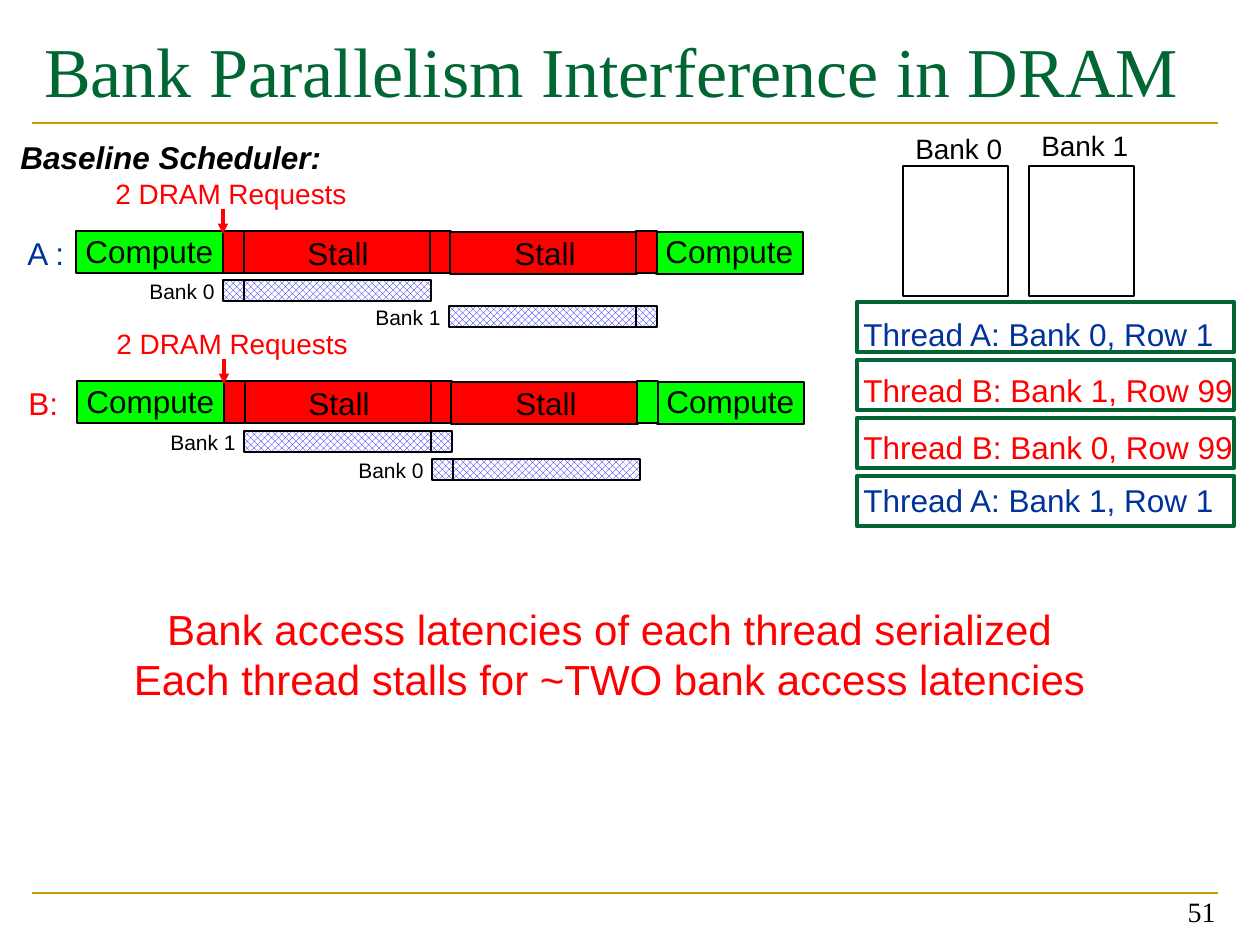
import lxml.etree
import pptx
import pptx.dml.color
import pptx.enum.dml
import pptx.enum.shapes
import pptx.enum.text
import pptx.oxml.ns
import pptx.util

EMU_PER_PX = 914400 / 126
BLACK, WHITE, RED, BLUE = "000000", "FFFFFF", "FF0000", "003399"
LIME, GREEN, GOLD, HATCH = "00FF00", "006633", "CC9900", "0000FF"
SHORT, LONG = 21, 187


def px(length):
    return pptx.util.Emu(round(length * EMU_PER_PX))


def color(value):
    return pptx.dml.color.RGBColor.from_string(value)


def add_text(slide, box, lines, size, fill, font="Arial", align="LEFT",
             anchor="TOP", wrap=False, bold=False, italic=False):
    shape = slide.shapes.add_textbox(*map(px, box))
    frame = shape.text_frame
    frame.word_wrap = wrap
    frame.vertical_anchor = getattr(pptx.enum.text.MSO_ANCHOR, anchor)
    frame.text = lines
    for paragraph in frame.paragraphs:
        paragraph.alignment = getattr(pptx.enum.text.PP_ALIGN, align)
        paragraph.font.name = font
        paragraph.font.size = pptx.util.Pt(size)
        paragraph.font.color.rgb = color(fill)
        paragraph.font.bold = bold
        paragraph.font.italic = italic
    return shape


def add_box(slide, box, fill=None, line=BLACK, weight=0.75):
    shape = slide.shapes.add_shape(
        pptx.enum.shapes.MSO_SHAPE.RECTANGLE, *map(px, box))
    shape.shadow.inherit = False
    shape.line.color.rgb = color(line)
    shape.line.width = pptx.util.Pt(weight)
    if fill is None:
        shape.fill.background()
    elif fill == HATCH:
        shape.fill.patterned()
        shape.fill.pattern = pptx.enum.dml.MSO_PATTERN.LARGE_CHECKER_BOARD
        shape.fill.fore_color.rgb = color(HATCH)
        shape.fill.back_color.rgb = color(WHITE)
    else:
        shape.fill.solid()
        shape.fill.fore_color.rgb = color(fill)


def add_line(slide, start, end, line, weight, arrow=False):
    connector = slide.shapes.add_connector(
        pptx.enum.shapes.MSO_CONNECTOR.STRAIGHT, *map(px, start + end))
    connector.line.color.rgb = color(line)
    connector.line.width = pptx.util.Pt(weight)
    qualified = pptx.oxml.ns.qn
    properties = connector._element.spPr
    if arrow:
        outline = properties.find(qualified("a:ln"))
        lxml.etree.SubElement(outline, qualified("a:tailEnd"), type="triangle")
    lxml.etree.SubElement(properties, qualified("a:effectLst"))


def add_frame(slide, left, right):
    for top in (123, 893):
        add_line(slide, (left, top), (right, top), GOLD, 1.5)
    add_text(slide, (left, 21, right - left, 147),
             "Bank Parallelism Interference in DRAM", 40, GREEN,
             font="Times New Roman", wrap=True)
    add_text(slide, (934, 871, 294, 63), "51", 16, BLACK,
             font="Times New Roman", align="RIGHT", anchor="BOTTOM", wrap=True)


def add_banks(slide, left, top):
    for index, label_rise in enumerate((41, 44)):
        x = left + 126 * index
        add_box(slide, (x, top, 105, 130))
        add_text(slide, (x, top - label_rise, 113, 47), f"Bank {index}", 16, BLACK)


def add_queue(slide, left, top):
    requests = [
        ("Thread A: Bank 0, Row 1", BLUE, 384, 7),
        ("Thread B: Bank 1, Row 99", RED, 404, 5),
        ("Thread B: Bank 0, Row 99", RED, 404, 4),
        ("Thread A: Bank 1, Row 1", BLUE, 384, -1),
    ]
    for index, (request, fill, width, drop) in enumerate(requests):
        y = top + 58 * index
        add_text(slide, (left - 6, y + drop, width, 52), request, 18, fill)
        add_box(slide, (left, y, 377, 50), line=GREEN, weight=2.5)


def add_bank_access(slide, left, top, bank, short_first):
    widths = (SHORT, LONG) if short_first else (LONG, SHORT)
    add_box(slide, (left, top, widths[0], 21), HATCH)
    add_box(slide, (left + widths[0], top, widths[1], 21), HATCH)
    add_text(slide, (left - 86, top - 8, 91, 38), f"Bank {bank}", 12, BLACK)


def add_thread(slide, left, top, name, name_color, name_width, last_color, accesses):
    segments = [
        (0, 0, 147, LIME),
        (580, 1, 147, LIME),
        (168, 0, LONG, RED),
        (147, 0, SHORT, RED),
        (354, 0, SHORT, RED),
        (374, 1, LONG, RED),
        (560, 0, SHORT, last_color),
    ]
    labels = [
        (-61, -3, name_width, name, 18, name_color),
        (-3, -5, 156, "Compute", 18, BLACK),
        (219, -3, 88, "Stall", 18, BLACK),
        (426, -3, 88, "Stall", 18, BLACK),
        (577, -5, 156, "Compute", 18, BLACK),
        (27, -61, 262, "2 DRAM Requests", 16, RED),
    ]
    for x, y, width, fill in segments:
        add_box(slide, (left + x, top + y, width, 42), fill)
    for x, y, width, label, size, fill in labels:
        add_text(slide, (left + x, top + y, width, 52), label, size, fill)
    add_line(slide, (left + 147, top - 22), (left + 147, top + 3), RED, 1.75, arrow=True)
    for x, y, bank, short_first in accesses:
        add_bank_access(slide, left + x, top + y, bank, short_first)


def add_conclusion(slide, box):
    shape = add_text(slide, box,
                     "Bank access latencies of each thread serialized\n"
                     "Each thread stalls for ~TWO bank access latencies",
                     24, RED, align="CENTER")
    shape.fill.solid()
    shape.fill.fore_color.rgb = color(WHITE)


def main():
    presentation = pptx.Presentation()
    presentation.slide_width = px(1260)
    presentation.slide_height = px(945)
    slide = presentation.slides.add_slide(presentation.slide_layouts[6])
    add_frame(slide, 32, 1218)
    add_banks(slide, 903, 166)
    add_queue(slide, 857, 302)
    add_text(slide, (8, 132, 343, 52), "Baseline Scheduler:", 18, BLACK,
             wrap=True, bold=True, italic=True)
    add_thread(slide, 76, 231, "A :", BLUE, 64, RED,
               [(147, 49, 0, True), (373, 75, 1, False)])
    add_thread(slide, 77, 381, "B:", RED, 55, LIME,
               [(167, 50, 1, False), (355, 78, 0, True)])
    add_conclusion(slide, (116, 597, 987, 115))
    presentation.save("out.pptx")


if __name__ == "__main__":
    main()
